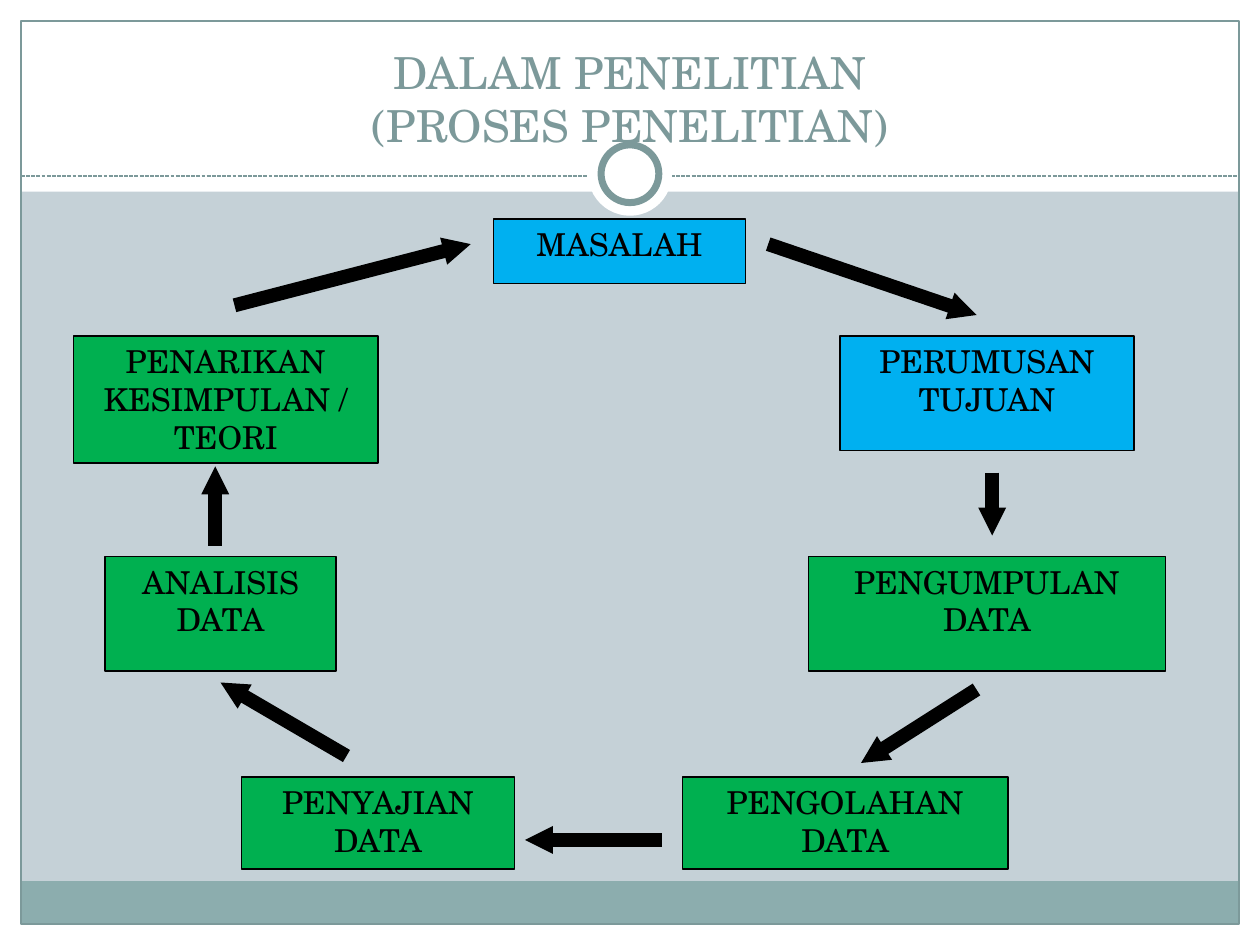
from lxml.etree import SubElement
from pptx import Presentation
from pptx.dml.color import RGBColor
from pptx.enum.dml import MSO_LINE
from pptx.enum.shapes import MSO_CONNECTOR, MSO_SHAPE
from pptx.enum.text import MSO_ANCHOR, PP_ALIGN
from pptx.oxml.ns import qn
from pptx.util import Pt

COLORS = {
    "backdrop": "C5D1D7",
    "white": "FFFFFF",
    "teal": "7C999A",
    "footer": "8CADAE",
    "blue": "00B0F0",
    "green": "00B050",
    "black": "000000",
}
WIDTH, HEIGHT = 720, 540
MARGIN = 12


def rgb(name):
    return RGBColor.from_string(COLORS[name])


class SlideBuilder:
    font = "TeX Gyre Schola"

    def __init__(self, slide):
        self.slide = slide

    def background(self, color):
        fill = self.slide.background.fill
        fill.solid()
        fill.fore_color.rgb = rgb(color)

    def label(self, frame, text, size, color, anchor):
        frame.word_wrap = True
        frame.vertical_anchor = anchor
        paragraph = frame.paragraphs[0]
        paragraph.text = text
        paragraph.alignment = PP_ALIGN.CENTER
        paragraph.font.name = self.font
        paragraph.font.size = Pt(size)
        paragraph.font.color.rgb = rgb(color)

    def shape(self, box, fill=None, line=None, width=0.75, preset=MSO_SHAPE.RECTANGLE):
        shape = self.slide.shapes.add_shape(preset, *map(Pt, box))
        shape.shadow.inherit = False
        if fill:
            shape.fill.solid()
            shape.fill.fore_color.rgb = rgb(fill)
        else:
            shape.fill.background()
        if line:
            shape.line.color.rgb = rgb(line)
            shape.line.width = Pt(width)
        else:
            shape.line.fill.background()
        return shape

    def circle(self, center, diameter, line=None, width=0.75):
        x, y = center
        box = (x - diameter / 2, y - diameter / 2, diameter, diameter)
        self.shape(box, "white", line, width, MSO_SHAPE.OVAL)

    def step(self, text, box, fill):
        step = self.shape(box, fill, "black", 1)
        self.label(step.text_frame, text, 18, "black", MSO_ANCHOR.TOP)

    def title(self, text, box):
        title = self.slide.shapes.add_textbox(*map(Pt, box))
        self.label(title.text_frame, text, 25.2, "teal", MSO_ANCHOR.BOTTOM)

    def line(self, start, end, color, width):
        line = self.slide.shapes.add_connector(
            MSO_CONNECTOR.STRAIGHT, *map(Pt, start + end))
        line.line.color.rgb = rgb(color)
        line.line.width = Pt(width)
        SubElement(line._element.spPr, qn("a:effectLst"))
        return line

    def divider(self, start, end):
        self.line(start, end, "teal", 0.75).line.dash_style = MSO_LINE.SQUARE_DOT

    def arrow(self, start, end):
        arrow = self.line(start, end, "black", 8)
        outline = arrow._element.spPr.find(qn("a:ln"))
        SubElement(outline, qn("a:tailEnd"), type="triangle", w="sm", len="sm")


def main():
    presentation = Presentation()
    presentation.slide_width = Pt(WIDTH)
    presentation.slide_height = Pt(HEIGHT)
    builder = SlideBuilder(presentation.slides.add_slide(presentation.slide_layouts[6]))

    builder.background("backdrop")
    borders = [
        (0, HEIGHT - MARGIN, WIDTH, MARGIN),
        (0, 0, WIDTH, 109.5),
        (0, 0, MARGIN, HEIGHT),
        (WIDTH - MARGIN, 0, MARGIN, HEIGHT),
    ]
    for border in borders:
        builder.shape(border, "white")
    builder.shape((MARGIN, 503.5, WIDTH - 2 * MARGIN, 24.5), "footer")
    builder.shape((MARGIN, MARGIN, WIDTH - 2 * MARGIN, HEIGHT - 2 * MARGIN), line="teal")
    builder.divider((MARGIN, 100.6), (WIDTH - MARGIN, 100.6))
    ring_center = (WIDTH / 2, 99.3)
    builder.circle(ring_center, 48)
    builder.circle(ring_center, 33, "teal", 4)
    builder.title("DALAM PENELITIAN\n(PROSES PENELITIAN)", (54, 18, 612, 72))

    steps = [
        ("MASALAH", (282, 125, 144, 37), "blue"),
        ("PERUMUSAN TUJUAN", (480, 192, 168, 65.5), "blue"),
        ("PENGUMPULAN DATA", (462, 318, 204, 65.5), "green"),
        ("PENGOLAHAN DATA", (390, 444, 186, 52.5), "green"),
        ("PENYAJIAN DATA", (138, 444, 156, 52.5), "green"),
        ("ANALISIS DATA", (60, 318, 132, 65.5), "green"),
        ("PENARIKAN KESIMPULAN / TEORI", (42, 192, 174, 72.7), "green"),
    ]
    for text, box, fill in steps:
        builder.step(text, box, fill)

    arrows = [
        ((134, 174.5), (269, 139.5)),
        ((439, 139.5), (558, 180)),
        ((558, 394), (492, 436)),
        ((198, 432), (126, 390)),
        ((123, 312), (123, 266.5)),
        ((567, 270), (567, 306)),
        ((378, 480), (300, 480)),
    ]
    for start, end in arrows:
        builder.arrow(start, end)

    presentation.save("out.pptx")


if __name__ == "__main__":
    main()
